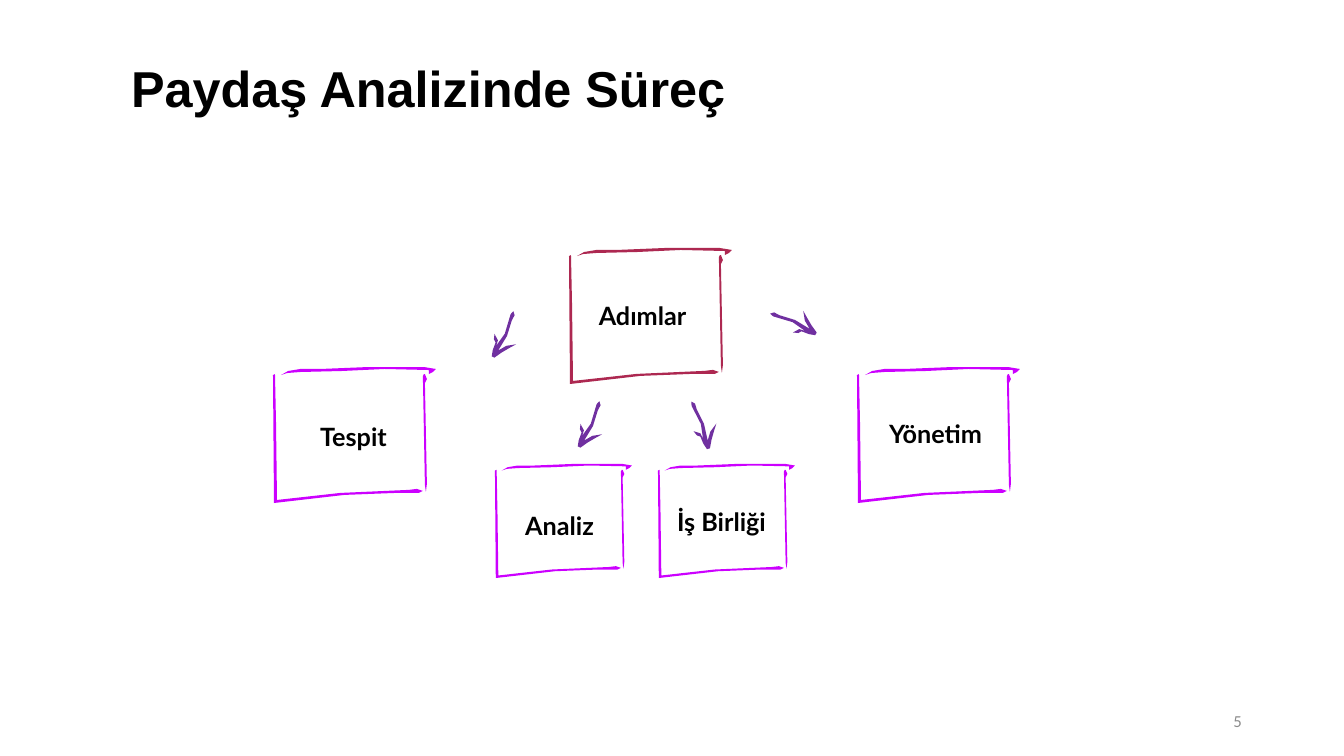
from pptx import Presentation
from pptx import util as u
from pptx.dml.color import RGBColor
from pptx.enum import text

PX = 914400 / 100.8
PURPLE, VIOLET, CRIMSON = "7030A0", "CC00FF", "AD2851"

# Corners of each stroke on its grid
FRAME_GRID = (162, 136)
FRAME_STROKES = [
    "162,3 159,6 155,8 155,4 111,3 68,5 27,6 14,7 8,9 15,5 27,3 47,3 95,1 150,1",
    "150,8 149,10 151,118 152,125 153,117 151,17 153,13 151,8",
    "0,9 1,136 71,128 122,126 145,126 149,124 143,122 135,123 67,126 4,133 3,56 2,8",
]
ARROW_GRID = (24, 50)
ARROW_STROKES = [
    """16,0 18,6 19,14 22,16 24,21 18,17 17,11 15,26 18,41 19,46 18,50
    15,47 15,41 12,25 13,8 8,16 0,22 4,16 9,8 13,0""",
]

# Label, frame box, label offset within the frame, frame colour
STEPS = [
    ("Analiz", (495, 463, 137, 115), (-10, 42), VIOLET),
    ("İş Birliği", (658, 463, 137, 115), (-11, 38), VIOLET),
    ("Yönetim", (857, 366, 163, 137), (4, 47), VIOLET),
    ("Tespit", (273, 366, 163, 137), (6, 50), VIOLET),
    ("Adımlar", (569, 247, 163, 137), (-1, 48), CRIMSON),
]
# Left, top and rotation
ARROWS = [(581, 401, 207.9), (692, 399, 164.1), (783, 295, 117.8), (495, 311, 207.9)]


def px(length):
    return u.Emu(round(length * PX))


def colour(code):
    return RGBColor.from_string(code)


def scale_stroke(stroke, scale_x, scale_y):
    corners = [tuple(map(int, pair.split(","))) for pair in stroke.split()]
    return [(px(x * scale_x), px(y * scale_y)) for x, y in corners]


def add_sketch(page, strokes, grid, box, fill):
    """Draw hand-drawn strokes, given on a grid, stretched over the box."""
    left, top, width, height = box
    outlines = [scale_stroke(stroke, width / grid[0], height / grid[1]) for stroke in strokes]
    builder = page.shapes.build_freeform(*outlines[0][0])
    for i, outline in enumerate(outlines):
        if i:
            builder.move_to(*outline[0])
        builder.add_line_segments(outline[1:], close=True)
    sketch = builder.convert_to_shape(px(left), px(top))
    sketch.fill.solid()
    sketch.fill.fore_color.rgb = colour(fill)
    sketch.line.fill.background()
    sketch.shadow.inherit = False
    return sketch


def write(box, words, size, font, ink, align, bold=False):
    frame = box.text_frame
    frame.word_wrap = True
    frame.auto_size = text.MSO_AUTO_SIZE.NONE
    frame.text = words
    para = frame.paragraphs[0]
    para.alignment = align
    para.font.size = u.Pt(size)
    para.font.name = font
    para.font.bold = bold
    para.font.color.rgb = colour(ink)
    return frame


def add_text(page, box, *style, **options):
    return write(page.shapes.add_textbox(*map(px, box)), *style, **options)


def add_title(page, box, words):
    title = page.shapes.title
    title.left, title.top, title.width, title.height = map(px, box)
    frame = write(title, words, 36, "Arial", "000000", text.PP_ALIGN.LEFT, bold=True)
    frame.vertical_anchor = text.MSO_ANCHOR.MIDDLE
    frame.paragraphs[0].line_spacing = 0.9


def add_step(page, box, label, offset, fill):
    add_sketch(page, FRAME_STROKES, FRAME_GRID, box, fill)
    label_box = (box[0] + offset[0], box[1] + offset[1], 149, 40)
    add_text(page, label_box, label, 18, "Lato", "000000", text.PP_ALIGN.CENTER, bold=True)


def add_arrow(page, box, rotation):
    add_sketch(page, ARROW_STROKES, ARROW_GRID, box, PURPLE).rotation = rotation


def add_page_number(page, box, number):
    frame = add_text(page, box, number, 12, "Calibri", "8C8C8C", text.PP_ALIGN.RIGHT)
    frame.vertical_anchor = text.MSO_ANCHOR.MIDDLE


def main():
    deck = Presentation()
    deck.slide_width, deck.slide_height = px(1344), px(756)
    page = deck.slides.add_slide(deck.slide_layouts[5])
    add_title(page, (121, 53, 869, 76), "Paydaş Analizinde Süreç")
    add_page_number(page, (950, 701, 302, 40), "5")
    for left, top, rotation in ARROWS:
        add_arrow(page, (left, top, *ARROW_GRID), rotation)
    for label, box, offset, fill in STEPS:
        add_step(page, box, label, offset, fill)
    deck.save("out.pptx")


if __name__ == "__main__":
    main()
